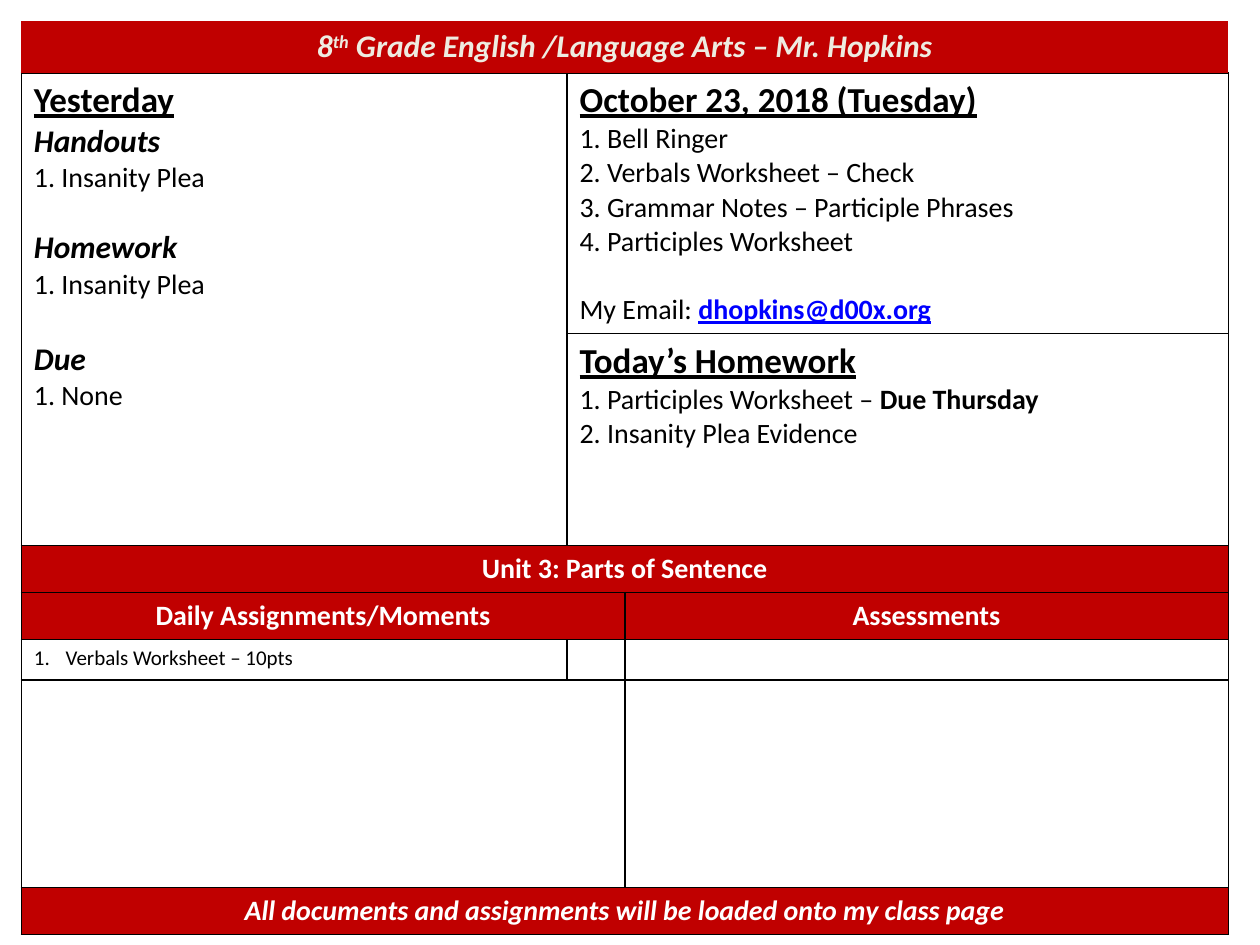
import pptx
import pptx.util
import pptx.dml.color
import pptx.enum.text
import pptx.oxml.ns
import lxml.etree

Cm = pptx.util.Cm
Pt = pptx.util.Pt
RGBColor = pptx.dml.color.RGBColor
CENTER = pptx.enum.text.PP_ALIGN.CENTER

RED = RGBColor(0xC0, 0x00, 0x00)
CREAM = RGBColor(0xEE, 0xEC, 0xE1)
WHITE = RGBColor(0xFF, 0xFF, 0xFF)
BLACK = RGBColor(0x00, 0x00, 0x00)
LINK_BLUE = RGBColor(0x00, 0x00, 0xFF)

FONT = "Calibri"
NO_STYLE = "{2D5ABB26-0587-4C30-8999-92F81FD0307C}"
LEFT = Cm(0.43)
WIDTH = Cm(24.33)
HANG = Cm(1.47)
ITEM_SIZE = 16


def add_xml(parent, tag, **attributes):
    return lxml.etree.SubElement(parent, pptx.oxml.ns.qn(tag), attributes)


def add_run(paragraph, text, size=ITEM_SIZE, color=BLACK, bold=False,
            italic=False, underline=False, baseline=None):
    run = paragraph.add_run()
    run.text = text
    font = run.font
    font.name, font.size, font.color.rgb = FONT, Pt(size), color
    font.bold, font.italic, font.underline = bold, italic, underline
    if baseline:
        font._element.set("baseline", str(baseline))


def add_line(cell, text="", align=None, hang=0, before=0, **style):
    """Write into the cell's first paragraph while empty, else a new one."""
    frame = cell.text_frame
    line = frame.paragraphs[0]
    if line.runs:
        line = frame.add_paragraph()
    line.alignment = align
    line.space_before = Pt(before)
    if hang:
        properties = line._p.get_or_add_pPr()
        properties.set("marL", str(hang))
        properties.set("indent", str(-hang))
    if text:
        add_run(line, text, **style)
    return line


def add_heading(cell, text):
    add_line(cell, text, size=20, bold=True, underline=True)


def add_items(cell, items):
    for number, item in enumerate(items, 1):
        line = add_line(cell, f"{number}. {item}", hang=HANG)
    return line


def add_band(cell, text, **style):
    cell.fill.solid()
    cell.fill.fore_color.rgb = RED
    return add_line(cell, text, align=CENTER, bold=True, **style)


def add_borders(cell):
    properties = cell._tc.get_or_add_tcPr()
    for side in ("a:lnL", "a:lnR", "a:lnT", "a:lnB"):
        border = add_xml(properties, side, w=str(Pt(1)))
        add_xml(add_xml(border, "a:solidFill"), "a:srgbClr", val=str(BLACK))


def add_grid(slide, top, widths, heights, bordered=True):
    frame = slide.shapes.add_table(len(heights), len(widths), LEFT, top,
                                   WIDTH, sum(heights))
    grid = frame.table
    grid.first_row = grid.horz_banding = False
    grid._tbl.tblPr.find(pptx.oxml.ns.qn("a:tableStyleId")).text = NO_STYLE
    for column, width in zip(grid.columns, widths):
        column.width = width
    for row, height in zip(grid.rows, heights):
        row.height = height
    for cell in grid.iter_cells():
        if bordered:
            add_borders(cell)
        cell.fill.background()
    return frame


def add_agenda(slide):
    frame = add_grid(slide, Cm(1.47), [Cm(11), Cm(13.33)], [Cm(4.65)] * 2)
    frame.height = Cm(9.83)
    agenda = frame.table
    agenda.cell(0, 0).merge(agenda.cell(1, 0))
    yesterday, today, homework = (
        agenda.cell(0, 0), agenda.cell(0, 1), agenda.cell(1, 1))

    # Yesterday, with a gap above each later section
    add_heading(yesterday, "Yesterday")
    for section, item, gap in (("Handouts", "Insanity Plea", 0),
                               ("Homework", "Insanity Plea", 19.5),
                               ("Due", "None", 22)):
        add_line(yesterday, section, before=gap, size=18, bold=True, italic=True)
        add_items(yesterday, [item])

    # Today
    add_heading(today, "October 23, 2018 (Tuesday)")
    add_items(today, ["Bell Ringer", "Verbals Worksheet – Check",
                      "Grammar Notes – Participle Phrases",
                      "Participles Worksheet"])
    email = add_line(today, "My Email: ", hang=HANG, before=19.5)
    add_run(email, "dhopkins@d00x.org", color=LINK_BLUE, bold=True,
            underline=True)

    # Today's homework
    add_heading(homework, "Today’s Homework")
    add_items(homework, ["Participles Worksheet – ", "Insanity Plea Evidence"])
    add_run(homework.text_frame.paragraphs[1], "Due Thursday", bold=True)


def add_banner(slide):
    banner = add_grid(slide, Cm(0.43), [WIDTH], [Cm(1.04)], bordered=False).table
    style = {"size": 18, "color": CREAM, "italic": True}
    course = add_band(banner.cell(0, 0), "8", **style)
    add_run(course, "th", bold=True, baseline=30000, **style)
    add_run(course, " Grade English /Language Arts – Mr. Hopkins", bold=True,
            **style)


def add_unit(slide):
    band = Cm(0.94)
    unit = add_grid(slide, Cm(11), [WIDTH // 2] * 2,
                    [band, band, Cm(5), band]).table
    for row in (0, 3):
        unit.cell(row, 0).merge(unit.cell(row, 1))
    add_band(unit.cell(0, 0), "Unit 3: Parts of Sentence", color=WHITE)
    for column, label in enumerate(("Daily Assignments/Moments", "Assessments")):
        add_band(unit.cell(1, column), label, color=WHITE)
    assignment = add_line(unit.cell(2, 0), "Verbals Worksheet – 10pts",
                          hang=Cm(0.64), size=12)
    add_xml(assignment._p.get_or_add_pPr(), "a:buFont", typeface="+mj-lt")
    add_xml(assignment._p.get_or_add_pPr(), "a:buAutoNum", type="arabicPeriod")
    add_band(unit.cell(3, 0),
             "All documents and assignments will be loaded onto my class page",
             color=WHITE, italic=True)


def main():
    deck = pptx.Presentation()
    deck.slide_width, deck.slide_height = Cm(25.4), Cm(19.05)
    slide = deck.slides.add_slide(deck.slide_layouts[6])
    add_agenda(slide)
    add_banner(slide)
    add_unit(slide)
    deck.save("out.pptx")


if __name__ == "__main__":
    main()
